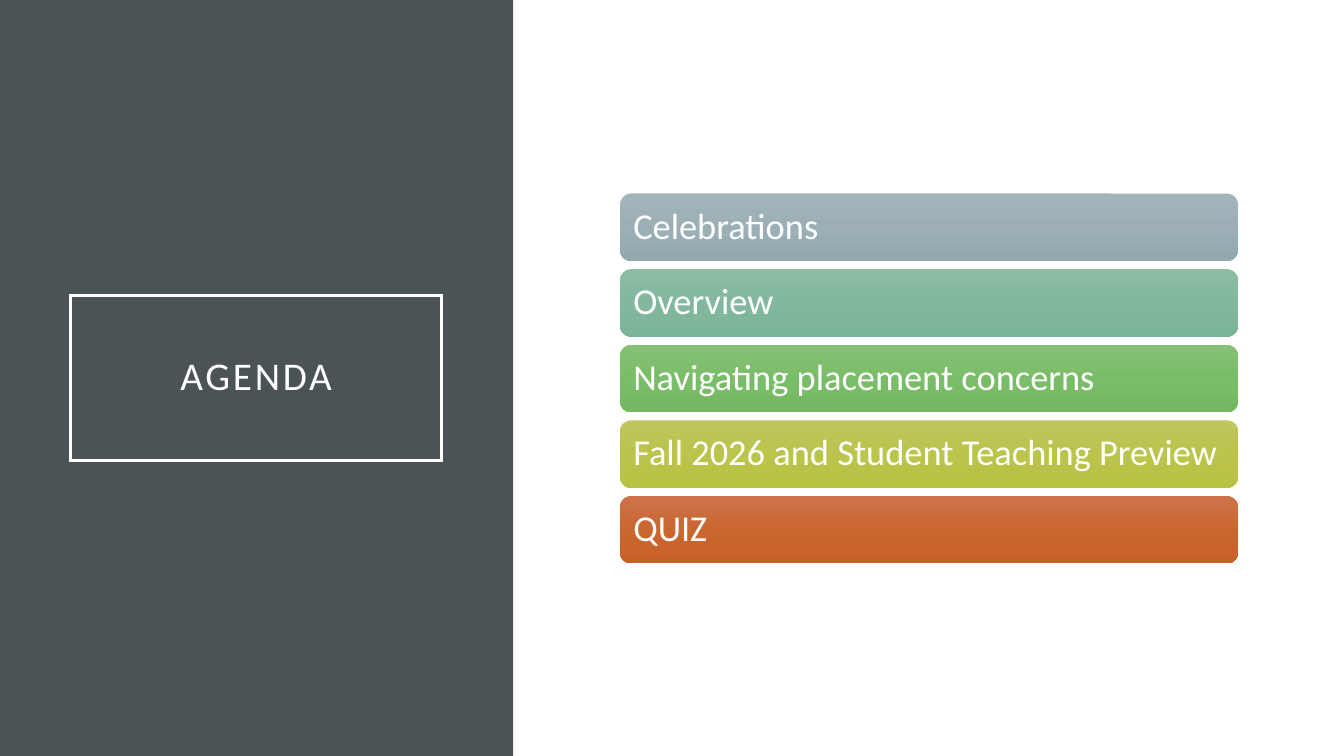
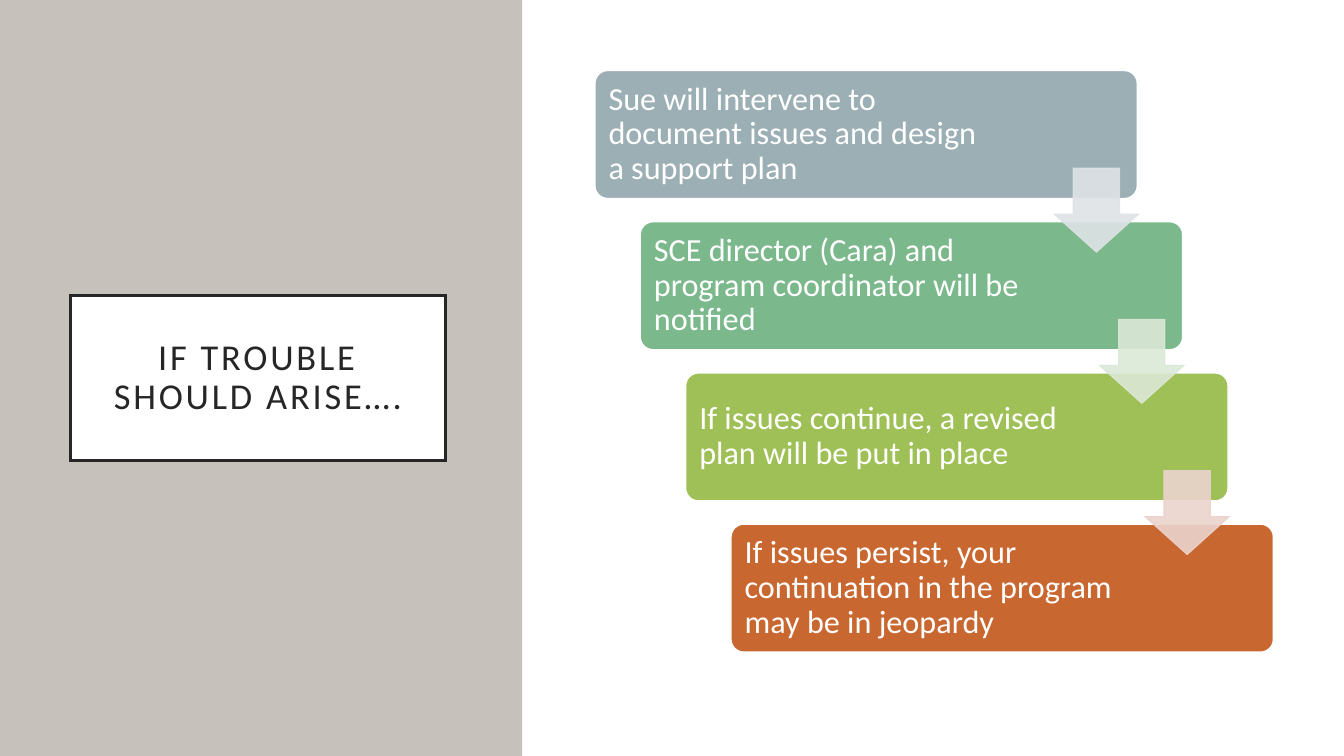
"""Build an agenda slide and a slide of descending intervention steps."""
from copy import deepcopy

from lxml import etree
from pptx import Presentation
from pptx.dml.color import RGBColor
from pptx.enum.shapes import MSO_SHAPE
from pptx.enum.text import MSO_ANCHOR, PP_ALIGN
from pptx.oxml.ns import qn
from pptx.util import Inches, Pt

RECT = MSO_SHAPE.RECTANGLE
ROUNDED = MSO_SHAPE.ROUNDED_RECTANGLE
DOWN_ARROW = MSO_SHAPE.DOWN_ARROW
MIDDLE = MSO_ANCHOR.MIDDLE
LEFT, CENTER = PP_ALIGN.LEFT, PP_ALIGN.CENTER

FONT = "Calibri"
COLORS = {
    "white": "FFFFFF",
    "ink": "262626",
    "slate": "4A5356",
    "stone": "C6C1BA",
    "steel": "9BAFB5",
    "green": "7BB88C",
    "lime": "9FC057",
    "rust": "C96731",
    "pale steel": "DEE3E5",
    "pale green": "DBE8D6",
    "pale rust": "EBD3CD",
}

AGENDA_TITLE = "AGENDA"
AGENDA = [
    ("Celebrations", ("A3B5BB", "9BAFB5", "93A9AF")),
    ("Overview", ("8DBCA5", "83B89E", "7BB398")),
    ("Navigating placement concerns", ("85C076", "7ABD68", "73B960")),
    ("Fall 2026 and Student Teaching Preview", ("BEC65E", "BBC44B", "B8C243")),
    ("QUIZ", ("CC734B", "CB662F", "C86128")),
]

TROUBLE_TITLE = "IF TROUBLE SHOULD ARISE…."
STEPS = [
    ("Sue will intervene to document issues and design a support plan", "steel"),
    ("SCE director (Cara) and program coordinator will be notified", "green"),
    ("If issues continue, a revised plan will be put in place", "lime"),
    ("If issues persist, your continuation in the program may be in jeopardy", "rust"),
]
ARROW_COLORS = ["pale steel", "pale green", "pale rust"]


def rgb(color):
    return RGBColor.from_string(COLORS.get(color, color))


def add_box(slide, kind, box, fill=None, line=None, line_width=1, adjust=()):
    shape = slide.shapes.add_shape(kind, *(Inches(length) for length in box))
    shape.shadow.inherit = False
    for index, value in enumerate(adjust):
        shape.adjustments[index] = value
    if fill:
        shape.fill.solid()
        shape.fill.fore_color.rgb = rgb(fill)
    else:
        shape.fill.background()
    if line:
        shape.line.color.rgb = rgb(line)
        shape.line.width = Pt(line_width)
        outline = shape._element.spPr.find(qn("a:ln"))
        etree.SubElement(outline, qn("a:miter")).set("lim", "800000")
    else:
        shape.line.fill.background()
    return shape


def write(shape, text, size, color, insets, align=LEFT, tracking=None):
    frame = shape.text_frame
    frame.word_wrap = True
    frame.vertical_anchor = MIDDLE
    left, top, right, bottom = (Inches(inset) for inset in insets)
    frame.margin_left, frame.margin_top = left, top
    frame.margin_right, frame.margin_bottom = right, bottom
    paragraph = frame.paragraphs[0]
    paragraph.alignment = align
    paragraph.line_spacing = 0.9
    run = paragraph.add_run()
    run.text = text
    run.font.name = FONT
    run.font.size = Pt(size)
    run.font.color.rgb = rgb(color)
    if tracking:
        run.font._element.set("spc", str(tracking * 100))


def shade(shape, colors):
    shape.fill.gradient()
    shape.fill.gradient_angle = 270
    stop_list = shape._element.spPr.find(qn("a:gradFill")).find(qn("a:gsLst"))
    stop_list.insert(1, deepcopy(stop_list[0]))
    for index, (stop, color) in enumerate(zip(shape.fill.gradient_stops, colors)):
        stop.position = index / 2
        stop.color.rgb = rgb(color)


def make_translucent(shape, percent):
    for color in shape._element.spPr.iter(qn("a:srgbClr")):
        etree.SubElement(color, qn("a:alpha")).set("val", str(percent * 1000))


def add_titled_slide(deck, title, size, band_color, band_width, title_width,
                     text_color, title_fill=None):
    slide = deck.slides.add_slide(deck.slide_layouts[6])
    add_box(slide, RECT, (0, 0, band_width, 7.5), band_color)
    title_box = add_box(slide, RECT, (0.7, 2.93, title_width, 1.64),
                        title_fill, text_color, 2.5)
    write(title_box, title, size, text_color, (0.2,) * 4, CENTER, tracking=2)
    return slide


def build_agenda(deck):
    slide = add_titled_slide(deck, AGENDA_TITLE, 28, "slate", 5.09, 3.68, "white")
    for index, (topic, colors) in enumerate(AGENDA):
        bar = add_box(slide, ROUNDED, (6.15, 1.92 + 0.75 * index, 6.13, 0.67))
        shade(bar, colors)
        write(bar, topic, 26, "white", (0.1,) * 4)


def build_steps(deck):
    slide = add_titled_slide(deck, TROUBLE_TITLE, 26, "stone", 5.18, 3.72,
                             "ink", "white")
    left, top, shift, drop = 5.9, 0.7, 0.45, 1.5
    for index, (text, color) in enumerate(STEPS):
        step = add_box(slide, ROUNDED,
                       (left + shift * index, top + drop * index, 5.38, 1.27),
                       color, "white", adjust=(0.1,))
        write(step, text, 23, "white", (0.1, 0.1, 1.5, 0.1))
    for index, color in enumerate(ARROW_COLORS):
        arrow = add_box(slide, DOWN_ARROW,
                        (left + 4.56 + shift * index, top + 0.97 + drop * index,
                         0.83, 0.83),
                        color, color, adjust=(0.55, 0.45))
        make_translucent(arrow, 90)


def main():
    deck = Presentation()
    deck.slide_width, deck.slide_height = Inches(13.33), Inches(7.5)
    build_agenda(deck)
    build_steps(deck)
    deck.save("out.pptx")


if __name__ == "__main__":
    main()
